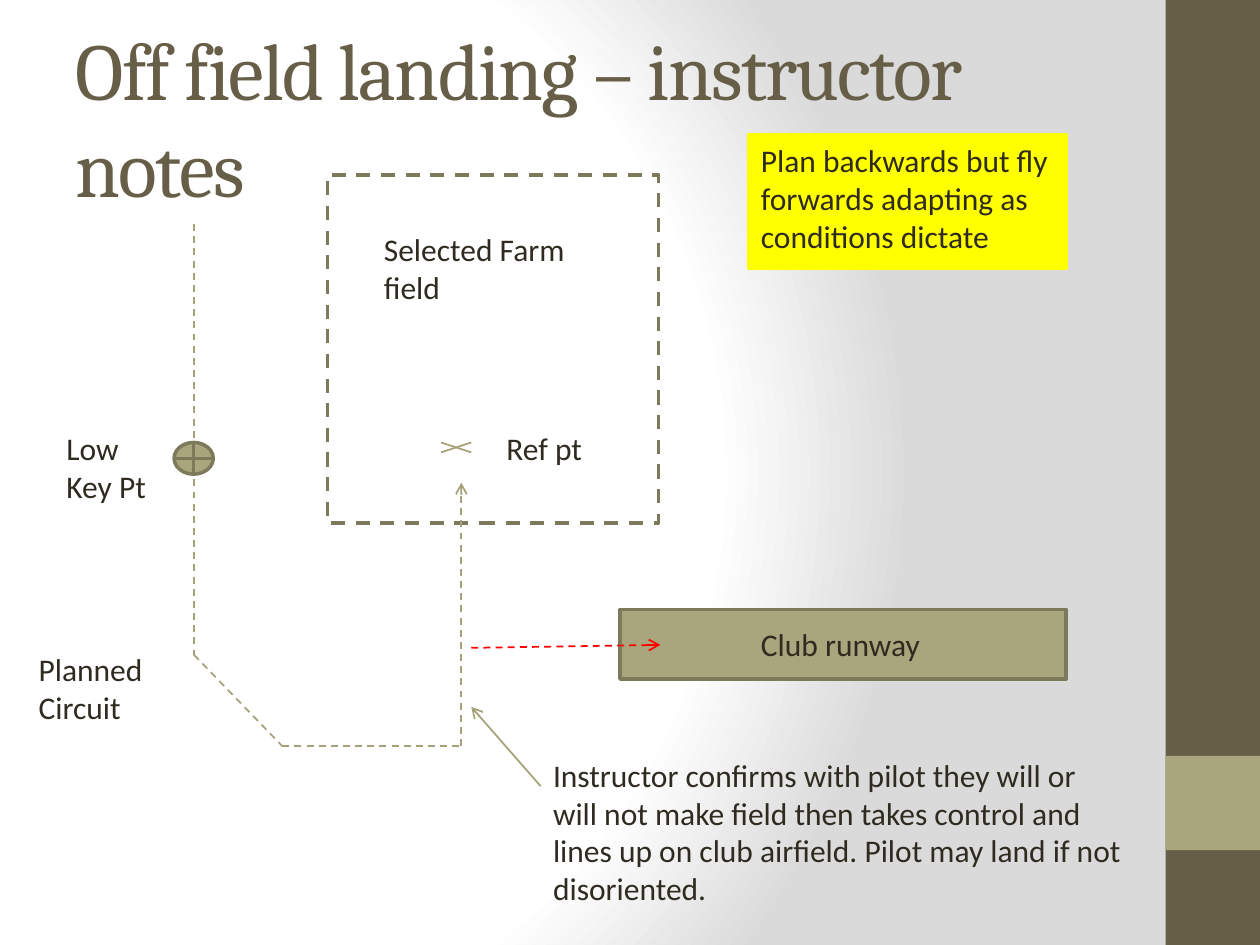
from itertools import pairwise

from lxml.etree import SubElement
from pptx import Presentation
from pptx.dml.color import RGBColor
from pptx.enum.dml import MSO_LINE
from pptx.enum.shapes import MSO_CONNECTOR, MSO_SHAPE
from pptx.enum.text import MSO_ANCHOR, MSO_AUTO_SIZE, PP_ALIGN
from pptx.oxml.ns import qn
from pptx.util import Cm, Pt

BROWN = "675E47"
OLIVE = "A9A57C"
OUTLINE = "7D7A5C"
ROUTE = "A6A278"
INK = "2F2B20"
YELLOW = "FFFF00"
RED = "FF0000"


def color(value):
    return RGBColor.from_string(value)


def lengths(*values):
    return [Cm(value) for value in values]


def style_text(frame, font_name, size, ink):
    for paragraph in frame.paragraphs:
        for span in paragraph.runs:
            span.font.name = font_name
            span.font.size = Pt(size)
            span.font.color.rgb = color(ink)


def set_background(page):
    page.background.fill.gradient()
    gradient = page.element.find(".//" + qn("a:gradFill"))
    for child in list(gradient):
        gradient.remove(child)
    stops = SubElement(gradient, qn("a:gsLst"))
    for position, value in ((0, "FFFFFF"), (75, "FFFFFF"), (100, "DADADA")):
        stop = SubElement(stops, qn("a:gs"), pos=str(position * 1000))
        SubElement(stop, qn("a:srgbClr"), val=value)
    circle = SubElement(gradient, qn("a:path"), path="circle")
    SubElement(circle, qn("a:fillToRect"), l="20000", t="50000", r="100000", b="50000")


def set_title(page, text):
    title = page.shapes.title
    title.left, title.top, title.width, title.height = lengths(1.27, 0.76, 21.16, 3.18)
    frame = title.text_frame
    frame.text = text
    frame.word_wrap = True
    frame.auto_size = MSO_AUTO_SIZE.NONE
    frame.vertical_anchor = MSO_ANCHOR.MIDDLE
    frame.paragraphs[0].alignment = PP_ALIGN.LEFT
    style_text(frame, "Cambria", 46, BROWN)
    frame.paragraphs[0].runs[0].font._element.set("spc", "-100")


def add_figure(page, kind, bounds, fill=None, line=None, dashed=False):
    figure = page.shapes.add_shape(kind, *lengths(*bounds))
    figure.shadow.inherit = False
    if fill:
        figure.fill.solid()
        figure.fill.fore_color.rgb = color(fill)
    else:
        figure.fill.background()
    if line:
        figure.line.color.rgb = color(line)
        figure.line.width = Pt(2)
    else:
        figure.line.fill.background()
    if dashed:
        figure.line.dash_style = MSO_LINE.DASH


def add_label(page, text, *bounds):
    box = page.shapes.add_textbox(*lengths(*bounds))
    frame = box.text_frame
    frame.text = text
    frame.word_wrap = True
    frame.auto_size = MSO_AUTO_SIZE.SHAPE_TO_FIT_TEXT
    style_text(frame, "Calibri", 18, INK)


def add_line(page, start, end, stroke=ROUTE, dashed=False, arrow=False):
    connector = page.shapes.add_connector(MSO_CONNECTOR.STRAIGHT, *lengths(*start, *end))
    connector.line.color.rgb = color(stroke)
    connector.line.width = Pt(1)
    if dashed:
        connector.line.dash_style = MSO_LINE.DASH
    if arrow:
        SubElement(connector.line._get_or_add_ln(), qn("a:tailEnd"), type="arrow")
    SubElement(connector.element.spPr, qn("a:effectLst"))


def add_circuit(page):
    corners = [(3.91, 4.52), (3.91, 13.2), (5.69, 15.04), (9.3, 15.04), (9.3, 9.73)]
    for start, end in pairwise(corners):
        add_line(page, start, end, dashed=True, arrow=end == corners[-1])


def add_reference_cross(page):
    left, right, top, bottom = 8.89, 9.5, 8.92, 9.12
    add_line(page, (left, top), (right, bottom))
    add_line(page, (left, bottom), (right, top))


def main():
    deck = Presentation()
    deck.slide_width, deck.slide_height = lengths(25.4, 19.05)
    page = deck.slides.add_slide(deck.slide_layouts[5])
    set_background(page)
    set_title(page, "Off field landing – instructor notes")

    rectangle = MSO_SHAPE.RECTANGLE
    add_figure(page, rectangle, (23.5, 0, 1.9, 19.05), BROWN)
    add_figure(page, rectangle, (23.5, 15.24, 1.9, 1.9), OLIVE)
    add_figure(page, rectangle, (12.5, 12.29, 8.99, 1.4), OLIVE, OUTLINE)
    add_figure(page, rectangle, (6.6, 3.53, 6.68, 7.01), line=OUTLINE, dashed=True)
    add_figure(page, rectangle, (15.09, 2.72, 6.4, 2.69), YELLOW, YELLOW)

    add_circuit(page)
    add_figure(page, MSO_SHAPE.FLOWCHART_OR, (3.51, 8.92, 0.79, 0.64), OLIVE, OUTLINE)
    add_reference_cross(page)
    add_line(page, (9.5, 13.06), (13.31, 13), RED, dashed=True, arrow=True)
    add_line(page, (10.9, 15.85), (9.5, 14.25), arrow=True)

    add_label(page, "Selected Farm field", 7.49, 4.52, 5, 1.8)
    add_label(page, "Ref pt", 9.96, 8.53, 2.54, 1.02)
    add_label(page, "Low\nKey Pt", 1.09, 8.53, 2.39, 1.8)
    add_label(page, "Planned\nCircuit", 0.53, 12.98, 3.99, 1.8)
    add_label(page, "Club runway", 15.09, 12.47, 4.6, 1.02)
    add_label(page, "Plan backwards but fly forwards adapting as conditions dictate",
              15.09, 2.72, 6.4, 2.57)
    add_label(page, "Instructor confirms with pilot they will or will not make field "
              "then takes control and lines up on club airfield. "
              "Pilot may land if not disoriented.", 10.9, 15.11, 11.99, 3.33)
    deck.save("out.pptx")


if __name__ == "__main__":
    main()
